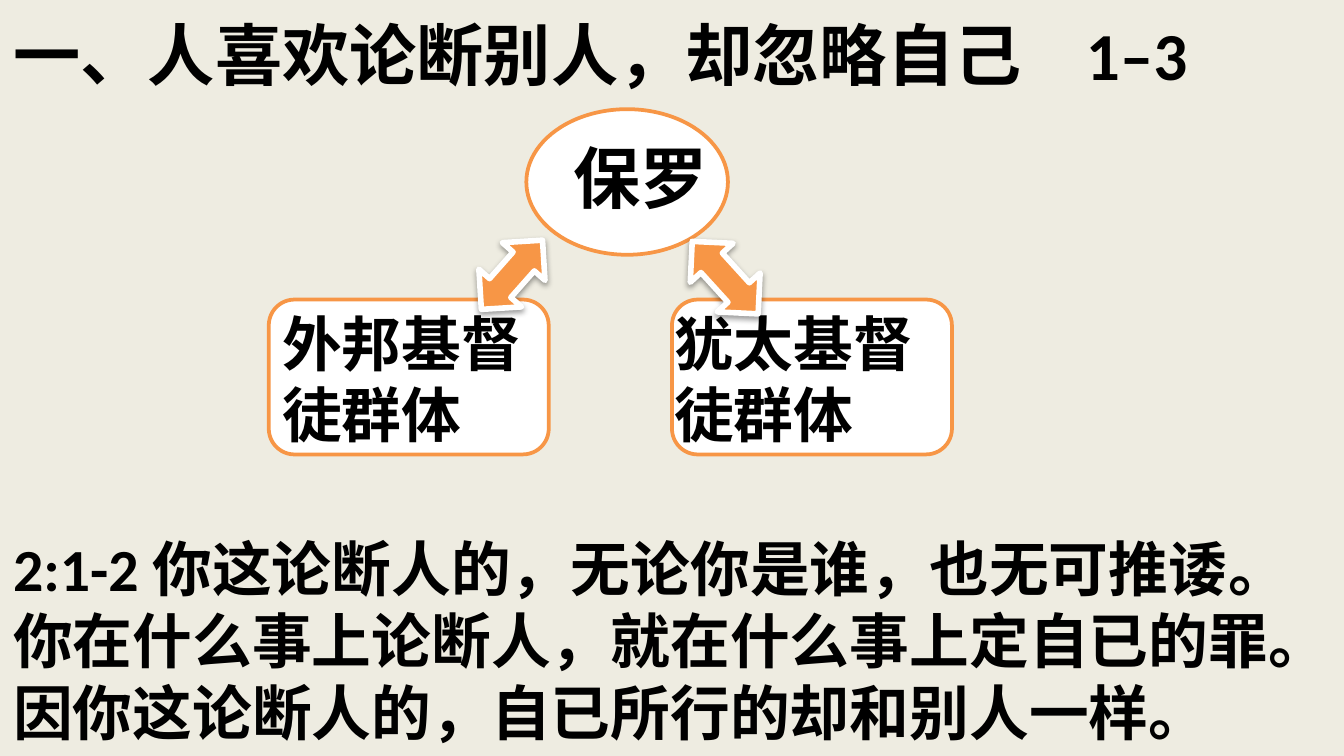
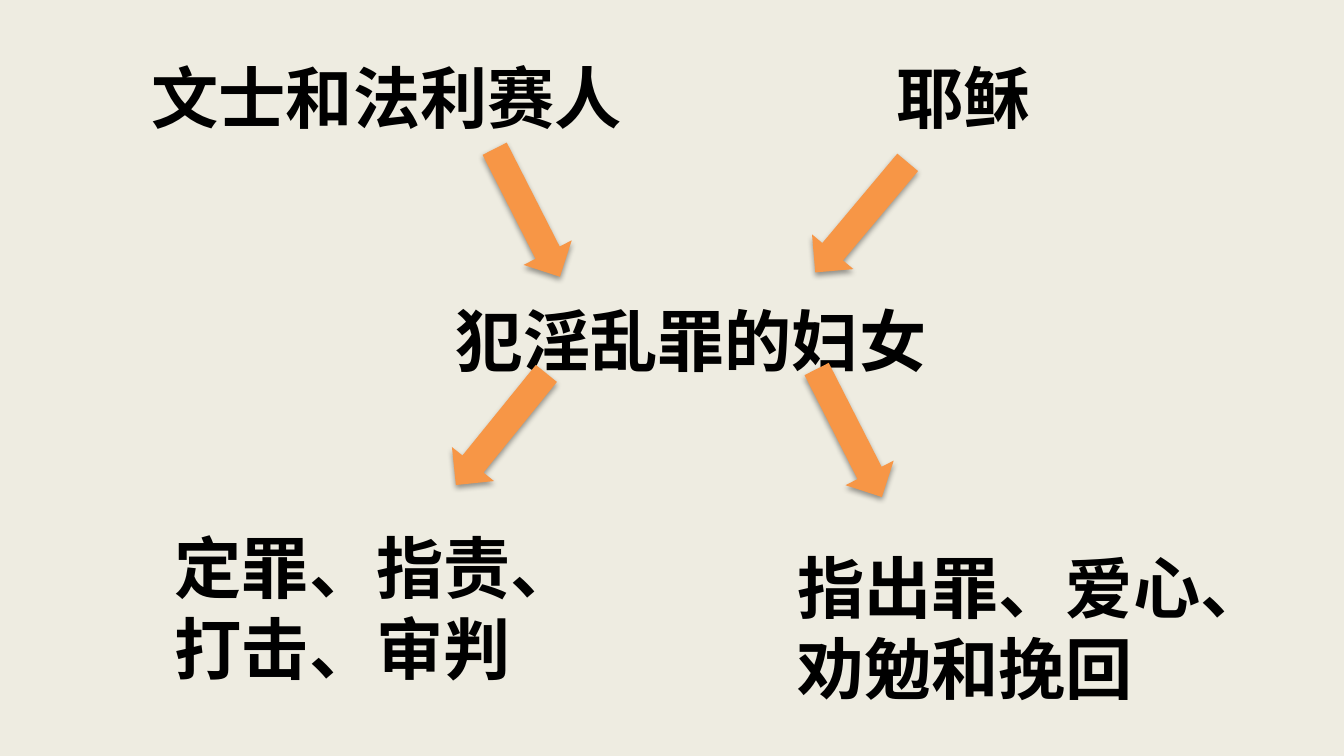
"""Build two slides on judging others, from Romans 2."""

from lxml.etree import SubElement
from pptx import Presentation
from pptx.dml.color import RGBColor
from pptx.enum.shapes import MSO_SHAPE
from pptx.enum.text import MSO_ANCHOR, MSO_AUTO_SIZE, PP_ALIGN
from pptx.oxml.ns import qn
from pptx.util import Pt

COLORS = {"paper": "EEECE1", "white": "FFFFFF", "orange": "F79646", "ink": "000000"}
LARGE, MEDIUM = 36, 32
LINE_HEIGHT = 43.5
INSET = 3.6

ROLES = {
    "title": ("一、人喜欢论断别人，却忽略自己\t1–3", [574.5]),
    "title_height": 101,
    "outlines": [
        (MSO_SHAPE.ROUNDED_RECTANGLE, (360, 160.5, 150, 83)),
        (MSO_SHAPE.ROUNDED_RECTANGLE, (144, 160.5, 150, 83)),
        (MSO_SHAPE.OVAL, (282, 58.5, 108, 78)),
    ],
    "labels": [
        ([("保罗", "Calibri")], LARGE, (300, 52.5, 96, 84)),
        ([("犹太基督徒群体", "Calibri")], MEDIUM, (354, 160.5, 168, 84)),
        ([("外邦基督徒群体", "Calibri")], MEDIUM, (144, 160.5, 168, 84)),
        ([("2:1-2 你这论断人的，无论你是谁，也无可推诿。", "Calibri"),
          ("你在什么事上论断人，就在什么事上定自已的罪。因你这论断人的，自已所行的却和别人一样。", "Arial")],
         MEDIUM, (0, 280.5, 720, 124.5)),
    ],
    "arrows": [
        (259, 122.5, 30.5, 49.5, 41.5),
        (373, 122.5, 31, 52.5, 317.7),
    ],
}

WOMAN = {
    "title_lines": [("\t文士和法利赛人\t耶稣", [74, 473]), ("\t犯淫乱罪的妇女", [237])],
    "title_height": 277,
    "labels": [
        ([("定罪、指责、打击、审判", "Calibri")], LARGE, (86.5, 263, 243.5, 124.5)),
        ([("指出罪、爱心、劝勉和挽回", "Calibri")], LARGE, (420, 269.5, 243.5, 133)),
    ],
    "arrow_size": (29, 77),
    "arrows": [(268, 75.5, 333), (440.5, 193.5, 333), (254, 191.5, 39), (447, 78, 40)],
}


def color(name):
    return RGBColor.from_string(COLORS[name])


def points(*values):
    return [Pt(value) for value in values]


def style(span, size, face="Calibri"):
    span.font.name = face
    span.font.size = Pt(size)
    span.font.bold = True
    span.font.color.rgb = color("ink")


def set_tabs(para, stops):
    tabs = SubElement(para._p.get_or_add_pPr(), qn("a:tabLst"))
    for stop in stops:
        SubElement(tabs, qn("a:tab"), pos=str(Pt(stop)), algn="l")


def prepare(frame):
    frame.word_wrap = True
    frame.auto_size = MSO_AUTO_SIZE.NONE
    frame.vertical_anchor = MSO_ANCHOR.MIDDLE


def add_page(deck, lines, height):
    page = deck.slides.add_slide(deck.slide_layouts[5])
    title = page.shapes.title
    title.left, title.top, title.width, title.height = points(0, 0, 720, height)
    frame = title.text_frame
    prepare(frame)
    frame.margin_bottom = Pt(INSET + LINE_HEIGHT)
    for index, (text, stops) in enumerate(lines):
        para = frame.add_paragraph() if index else frame.paragraphs[0]
        para.text = text
        para.alignment = PP_ALIGN.LEFT
        para.space_before = Pt(2 * LINE_HEIGHT if index else 0)
        set_tabs(para, stops)
        for span in para.runs:
            style(span, LARGE)
    return page


def add_label(page, spans, size, place):
    frame = page.shapes.add_textbox(*points(*place)).text_frame
    prepare(frame)
    for text, face in spans:
        span = frame.paragraphs[0].add_run()
        span.text = text
        style(span, size, face)


def add_outline(page, kind, place):
    shape = page.shapes.add_shape(kind, *points(*place))
    shape.shadow.inherit = False
    shape.fill.solid()
    shape.fill.fore_color.rgb = color("white")
    shape.line.color.rgb = color("orange")
    shape.line.width = Pt(2)


def add_arrow(page, kind, place, turn, edge=0):
    arrow = page.shapes.add_shape(kind, *points(*place))
    arrow.rotation = turn
    arrow.fill.solid()
    arrow.fill.fore_color.rgb = color("orange")
    if edge:
        arrow.line.color.rgb = color("white")
        arrow.line.width = Pt(edge)
    else:
        arrow.line.fill.background()
    arrow.shadow.inherit = False
    effects = arrow._element.spPr.find(qn("a:effectLst"))
    shadow = SubElement(effects, qn("a:outerShdw"), blurRad=str(Pt(3.1)),
                        dist=str(Pt(1.6)), dir="5400000", rotWithShape="0")
    tint = SubElement(shadow, qn("a:srgbClr"), val=COLORS["ink"])
    SubElement(tint, qn("a:alpha"), val="38000")


def build_roles(deck):
    page = add_page(deck, [ROLES["title"]], ROLES["title_height"])
    for outline in ROLES["outlines"]:
        add_outline(page, *outline)
    *names, verse = ROLES["labels"]
    for name in names:
        add_label(page, *name)
    for *place, turn in ROLES["arrows"]:
        add_arrow(page, MSO_SHAPE.UP_DOWN_ARROW, place, turn, edge=3)
    add_label(page, *verse)


def build_woman(deck):
    page = add_page(deck, WOMAN["title_lines"], WOMAN["title_height"])
    for left, top, turn in WOMAN["arrows"]:
        add_arrow(page, MSO_SHAPE.DOWN_ARROW, (left, top, *WOMAN["arrow_size"]), turn)
    for label in WOMAN["labels"]:
        add_label(page, *label)


def main():
    deck = Presentation()
    deck.slide_width, deck.slide_height = points(720, 405)
    paper = deck.slide_master.background.fill
    paper.solid()
    paper.fore_color.rgb = color("paper")
    build_roles(deck)
    build_woman(deck)
    deck.save("out.pptx")


if __name__ == "__main__":
    main()
